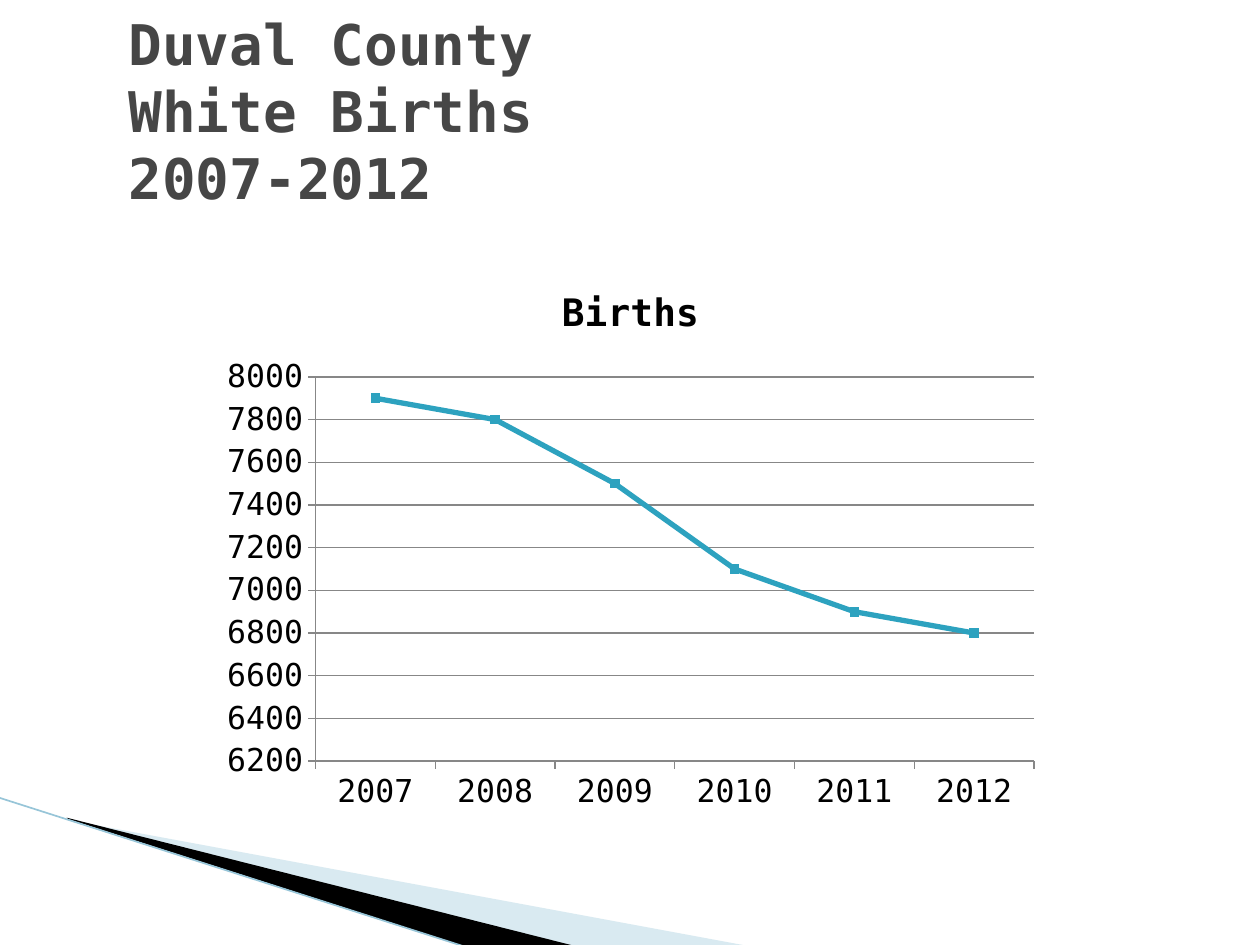
"""Build the slide showing white births in Duval County as a line chart."""
from dataclasses import dataclass
from typing import Optional

import lxml.etree
import pptx
import pptx.chart.data
import pptx.dml.color
import pptx.enum.chart
import pptx.enum.shapes
import pptx.enum.text
import pptx.oxml.ns
import pptx.util
from pptx.util import Inches

FONT = "DejaVu Sans Mono"
COLORS = {
    "title": "464646",
    "text": "000000",
    "pale": "A0CBDC",
    "dark": "000000",
    "edge": "97C5D8",
    "axis": "878787",
    "births": "2DA2BF",
}
BIRTHS = {"2007": 7900, "2008": 7800, "2009": 7500, "2010": 7100, "2011": 6900, "2012": 6800}


@dataclass
class Wedge:
    """A filled corner outline with its points in inches."""

    points: list[tuple[float, float]]
    color: str
    opacity: Optional[int] = None


WEDGES = [
    Wedge([(0.55, 6.51), (5.95, 7.51), (4.56, 7.51), (0.55, 6.5)], "pale", 40),
    Wedge([(0.53, 6.49), (4.57, 7.51), (3.72, 7.52), (0.54, 6.5)], "dark"),
]


def rgb(name: str) -> pptx.dml.color.RGBColor:
    """Return the named colour."""
    return pptx.dml.color.RGBColor.from_string(COLORS[name])


def style_font(font, size: float, color: str, bold: bool = False) -> None:
    """Set the face, size, colour and weight of a font."""
    font.name = FONT
    font.size = pptx.util.Pt(size)
    font.bold = bold
    font.color.rgb = rgb(color)


def draw_wedge(slide, wedge: Wedge) -> None:
    """Draw one corner wedge."""
    start, *rest = [(Inches(x), Inches(y)) for x, y in wedge.points]
    builder = slide.shapes.build_freeform(*start)
    builder.add_line_segments(rest, close=True)
    shape = builder.convert_to_shape()
    shape.shadow.inherit = False
    shape.line.fill.background()
    shape.fill.solid()
    shape.fill.fore_color.rgb = rgb(wedge.color)
    if wedge.opacity is not None:
        color = shape.fill._xPr.find(".//" + pptx.oxml.ns.qn("a:srgbClr"))
        alpha = lxml.etree.SubElement(color, pptx.oxml.ns.qn("a:alpha"))
        alpha.set("val", str(wedge.opacity * 1000))


def draw_edge(slide) -> None:
    """Draw the thin line along the corner wedges."""
    edge = slide.shapes.add_connector(
        pptx.enum.shapes.MSO_CONNECTOR.STRAIGHT,
        Inches(-0.01), Inches(6.33), Inches(3.71), Inches(7.52),
    )
    edge.line.color.rgb = rgb("edge")
    edge.line.width = pptx.util.Pt(0.95)
    lxml.etree.SubElement(edge._element.spPr, pptx.oxml.ns.qn("a:effectLst"))


def write_title(slide) -> None:
    """Place and format the slide title."""
    title = slide.shapes.title
    title.left, title.top = Inches(0.92), Inches(0.25)
    title.width, title.height = Inches(8.5), Inches(1.25)
    frame = title.text_frame
    frame.word_wrap = True
    frame.auto_size = pptx.enum.text.MSO_AUTO_SIZE.NONE
    frame.vertical_anchor = pptx.enum.text.MSO_ANCHOR.MIDDLE
    paragraph = frame.paragraphs[0]
    paragraph.text = "Duval County\vWhite Births\v2007-2012"
    paragraph.alignment = pptx.enum.text.PP_ALIGN.LEFT
    style_font(paragraph.font, 32, "title", bold=True)


def draw_chart(slide) -> None:
    """Draw the line chart of births by year."""
    data = pptx.chart.data.CategoryChartData()
    data.categories = list(BIRTHS)
    data.add_series("Births", list(BIRTHS.values()))
    chart = slide.shapes.add_chart(
        pptx.enum.chart.XL_CHART_TYPE.LINE_MARKERS,
        Inches(1.67), Inches(2.08), Inches(6.67), Inches(4.44), data,
    ).chart
    style_font(chart.font, 18, "text")
    chart.has_legend = False
    chart.has_title = True
    heading = chart.chart_title.text_frame.paragraphs[0]
    heading.text = "Births"
    style_font(heading.font, 21.6, "text", bold=True)

    values = chart.value_axis
    values.minimum_scale, values.maximum_scale, values.major_unit = 6200, 8000, 200
    values.has_major_gridlines = True
    for line in (values.format.line, chart.category_axis.format.line,
                 values.major_gridlines.format.line):
        line.color.rgb = rgb("axis")
        line.width = pptx.util.Pt(0.75)

    chart.plots[0].vary_by_categories = False
    series = chart.plots[0].series[0]
    series.smooth = False
    series.format.line.color.rgb = rgb("births")
    series.format.line.width = pptx.util.Pt(3)
    marker = series.marker
    marker.style = pptx.enum.chart.XL_MARKER_STYLE.SQUARE
    marker.size = 5
    marker.format.fill.solid()
    marker.format.fill.fore_color.rgb = rgb("births")
    marker.format.line.color.rgb = rgb("births")


def main() -> None:
    """Build and save the deck."""
    deck = pptx.Presentation()
    deck.slide_width, deck.slide_height = Inches(10), Inches(7.5)
    slide = deck.slides.add_slide(deck.slide_layouts[5])
    for wedge in WEDGES:
        draw_wedge(slide, wedge)
    draw_edge(slide)
    write_title(slide)
    draw_chart(slide)
    deck.save("out.pptx")


if __name__ == "__main__":
    main()
